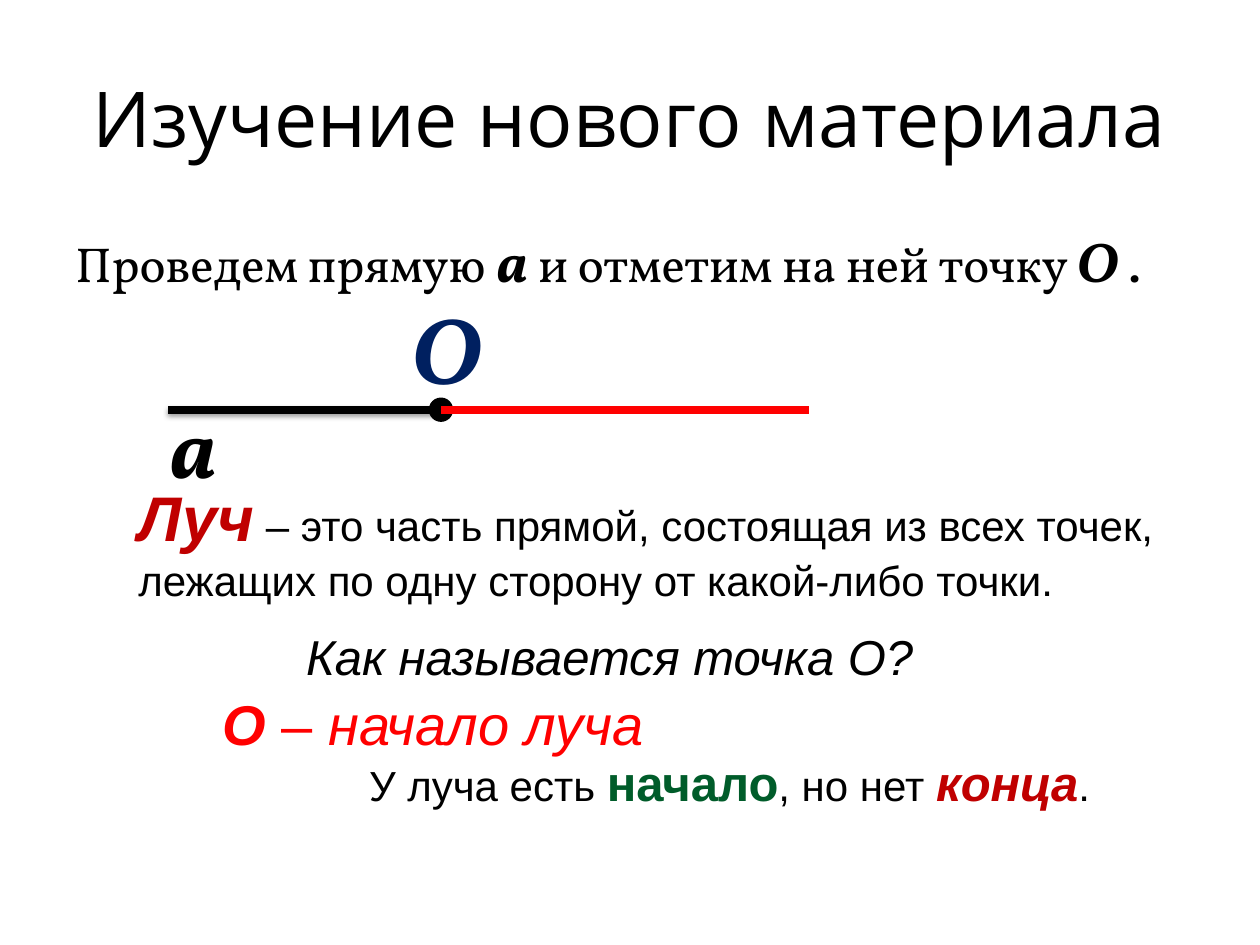
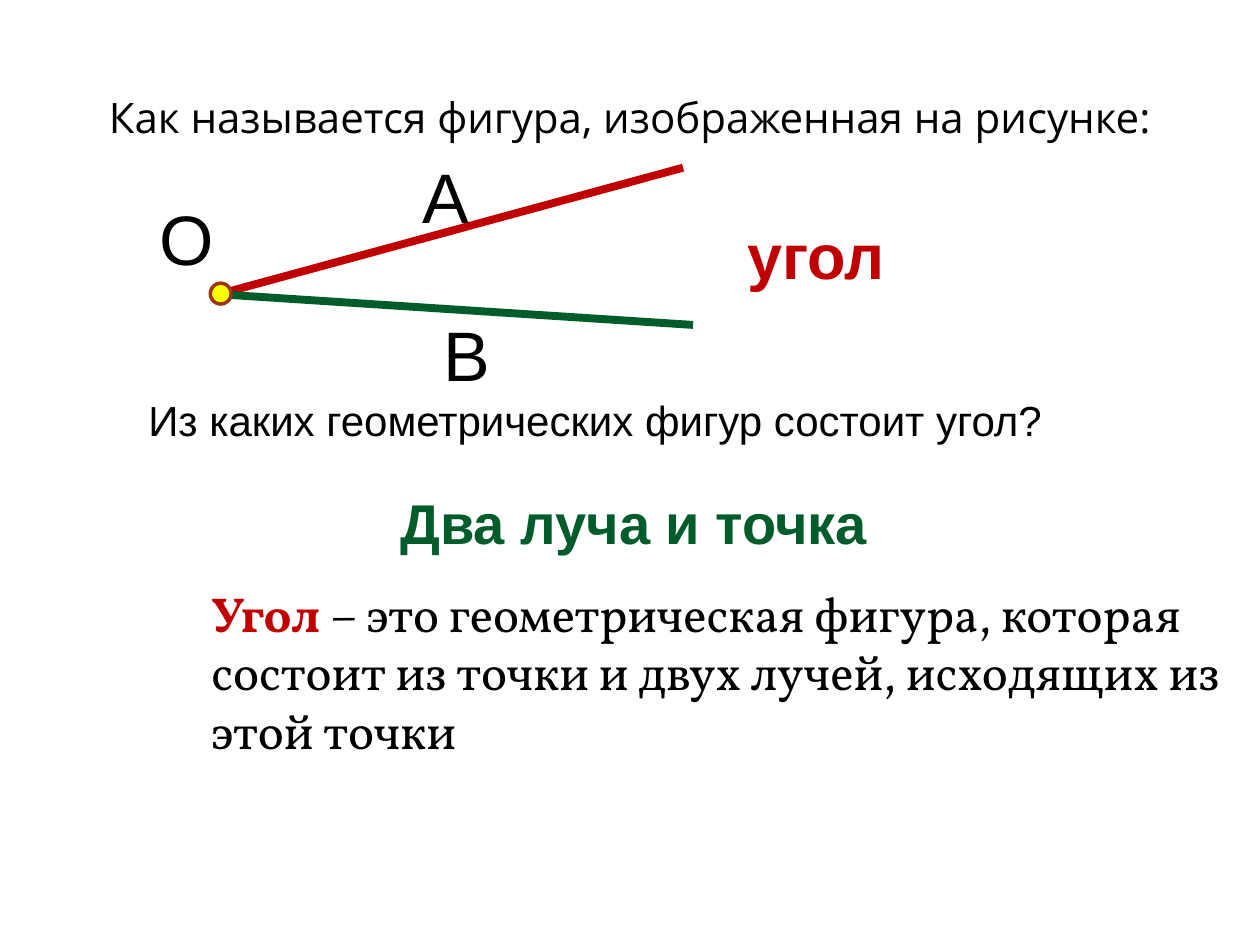
from lxml import etree
from pptx import Presentation
from pptx import util as u
from pptx.dml.color import RGBColor
from pptx.enum import shapes, text
from pptx.oxml.ns import qn

BLACK = RGBColor(0x00, 0x00, 0x00)
RED = RGBColor(0xFF, 0x00, 0x00)
CRIMSON = RGBColor(0xC0, 0x00, 0x00)
GREEN = RGBColor(0x00, 0x5C, 0x2A)
NAVY = RGBColor(0x00, 0x20, 0x60)
YELLOW = RGBColor(0xFF, 0xFF, 0x00)
BROWN = RGBColor(0x9C, 0x35, 0x11)

TITLE_FONT = "Open Sans"
SERIF = "Vollkorn"
SANS = "Arial"


class Lesson:
    line_width = u.Pt(4.5)
    point_size = 0.42

    def __init__(self):
        self.deck = Presentation()
        self.deck.slide_width = u.Cm(25.4)
        self.deck.slide_height = u.Cm(19.05)
        self.slide = None

    def new_slide(self, heading, size):
        self.slide = self.deck.slides.add_slide(self.deck.slide_layouts[5])
        title = self.slide.shapes.title
        title.left, title.top = u.Cm(1.27), u.Cm(0.76)
        title.width, title.height = u.Cm(22.86), u.Cm(3.18)
        title.text_frame.vertical_anchor = text.MSO_ANCHOR.MIDDLE
        paragraph = title.text_frame.paragraphs[0]
        paragraph.alignment = text.PP_ALIGN.CENTER
        self.run(paragraph, TITLE_FONT, heading, size)

    def run(self, paragraph, font_name, words, size, color=BLACK, style=""):
        run = paragraph.add_run()
        run.text = words
        run.font.name = font_name
        run.font.size = u.Pt(size)
        run.font.color.rgb = color
        run.font.bold = "b" in style
        run.font.italic = "i" in style

    def text(self, left, top, width, height, font_name, *runs, wrap=True):
        box = self.slide.shapes.add_textbox(
            u.Cm(left), u.Cm(top), u.Cm(width), u.Cm(height))
        frame = box.text_frame
        frame.word_wrap = wrap
        frame.auto_size = text.MSO_AUTO_SIZE.SHAPE_TO_FIT_TEXT
        for run in runs:
            self.run(frame.paragraphs[0], font_name, *run)

    def ray(self, start, end, color, shadow=False):
        ray = self.slide.shapes.add_connector(
            shapes.MSO_CONNECTOR.STRAIGHT, *map(u.Cm, start + end))
        ray.line.color.rgb = color
        ray.line.width = self.line_width
        effects = etree.SubElement(ray._element.spPr, qn("a:effectLst"))
        if shadow:
            outer = etree.SubElement(
                effects, qn("a:outerShdw"), blurRad=str(u.Pt(3.1)),
                dist=str(u.Pt(1.6)), dir="5400000", rotWithShape="0")
            tint = etree.SubElement(outer, qn("a:srgbClr"), val=str(BLACK))
            etree.SubElement(tint, qn("a:alpha"), val="38000")

    def point(self, center, fill, outline):
        x, y = center
        half = self.point_size / 2
        point = self.slide.shapes.add_shape(
            shapes.MSO_SHAPE.OVAL, u.Cm(x - half), u.Cm(y - half),
            u.Cm(self.point_size), u.Cm(self.point_size))
        point.shadow.inherit = False
        point.fill.solid()
        point.fill.fore_color.rgb = fill
        point.line.color.rgb = outline
        point.line.width = u.Pt(2)


def ray_slide(lesson):
    lesson.new_slide("Изучение нового материала", 44)
    lesson.text(1.27, 4.45, 22.86, 2.11, SERIF,
                ("Проведем прямую", 28), (" ", 32), ("а ", 32, BLACK, "bi"),
                ("и отметим на ней точку ", 28),
                ("О ", 32, BLACK, "bi"), (".", 32))

    origin = (8.89, 8.26)
    lesson.point(origin, BLACK, BLACK)
    lesson.ray((3.39, 8.26), origin, BLACK, shadow=True)
    lesson.ray(origin, (16.3, 8.26), RED)
    lesson.text(3.18, 7.82, 1.37, 2.31, SERIF,
                ("а", 48, BLACK, "bi"), wrap=False)
    lesson.text(8.05, 5.72, 1.91, 2.57, SERIF,
                ("О", 54, NAVY, "bi"), wrap=False)

    lesson.text(2.54, 9.53, 22.02, 2.82, SANS,
                ("Луч", 36, CRIMSON, "bi"),
                (" – это часть прямой, состоящая из всех точек, "
                 "лежащих по одну сторону от какой-либо точки.", 24))
    lesson.text(5.92, 12.5, 12.9, 1.45, SANS,
                ("Как называется точка О?", 28, BLACK, "i"), wrap=False)
    lesson.text(4.24, 13.77, 9.19, 1.63, SANS,
                ("О", 32, RED, "bi"), (" – ", 32, RED),
                ("начало луча", 32, RED, "i"), wrap=False)
    lesson.text(7.19, 15.04, 15.44, 1.45, SANS,
                ("У луча есть ", 24), ("начало", 28, GREEN, "b"),
                (", но нет ", 24), ("конца", 28, CRIMSON, "bi"), (".", 24))


def angle_slide(lesson):
    lesson.new_slide("Как называется фигура, изображенная на рисунке:", 24)

    vertex = (4.45, 5.92)
    lesson.ray(vertex, (13.77, 3.38), CRIMSON)
    lesson.ray((4.24, 5.92), (13.97, 6.55), GREEN)
    lesson.point(vertex, YELLOW, BROWN)
    for letter, left, top in (("О", 2.97, 3.81), ("А", 8.26, 2.97),
                              ("В", 8.69, 6.15)):
        lesson.text(left, top, 1.63, 1.96, SANS, (letter, 40))

    lesson.text(14.81, 4.24, 3.3, 1.8, SANS,
                ("угол", 36, CRIMSON, "b"), wrap=False)
    lesson.text(2.74, 7.82, 19.05, 1.27, SANS,
                ("Из каких геометрических фигур состоит угол?", 24))
    lesson.text(7.82, 9.73, 10.01, 1.63, SANS,
                ("Два луча и точка", 32, GREEN, "b"), wrap=False)
    lesson.text(4.01, 11.63, 21.39, 3.84, SERIF,
                ("Угол ", 28, CRIMSON, "b"),
                ("– это геометрическая фигура, которая состоит из точки "
                 "и двух лучей, исходящих из этой точки", 28))


def main():
    lesson = Lesson()
    ray_slide(lesson)
    angle_slide(lesson)
    lesson.deck.save("out.pptx")


if __name__ == "__main__":
    main()
